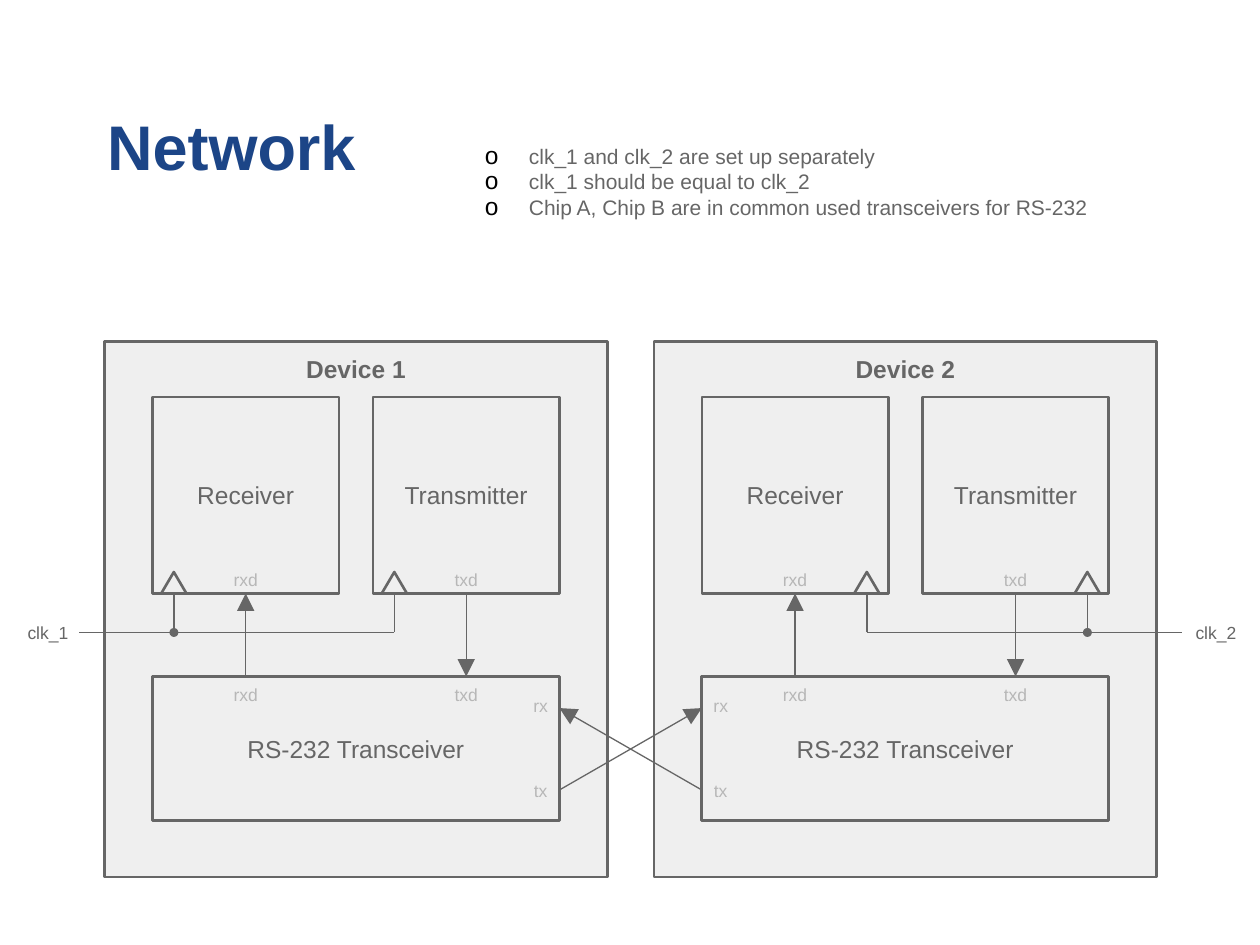
"""Build the Network slide: two devices joined through RS-232 transceivers."""
from lxml.etree import SubElement
from pptx import Presentation
from pptx.dml.color import RGBColor
from pptx.enum.shapes import MSO_CONNECTOR, MSO_SHAPE
from pptx.enum.text import MSO_ANCHOR, MSO_AUTO_SIZE, PP_ALIGN
from pptx.oxml.ns import qn
from pptx.util import Inches, Pt

NAVY = RGBColor(0x1C, 0x45, 0x87)
GRAY = RGBColor(0x66, 0x66, 0x66)
SILVER = RGBColor(0xB7, 0xB7, 0xB7)
PALE = RGBColor(0xEF, 0xEF, 0xEF)
FONT = "Arial"

TITLE = "Network"
NOTES = [
    "clk_1 and clk_2 are set up separately",
    "clk_1 should be equal to clk_2",
    "Chip A, Chip B are in common used transceivers for RS-232",
]
DEVICES = [("Device 1", "clk_1", 0.83, False), ("Device 2", "clk_2", 5.19, True)]
BLOCKS = [("Receiver", "rxd", True), ("Transmitter", "txd", False)]
TRANSCEIVER = "RS-232 Transceiver"
LINKS = [("rx", 5.6), ("tx", 6.27)]

DEVICE_TOP, DEVICE_W, DEVICE_H = 2.71, 3.99, 4.25
PAD, COLUMN_STEP = 0.38, 1.75
BLOCK_TOP, BLOCK_W, BLOCK_H = 3.15, 1.48, 1.56
BLOCK_BOTTOM = BLOCK_TOP + BLOCK_H
TRANSCEIVER_TOP, TRANSCEIVER_H = 5.37, 1.14
CLOCK_Y, CLOCK_INSET = 5.02, 0.17
CLOCK_W, CLOCK_H, DOT = 0.2, 0.17, 0.05
LABEL_W, LABEL_H = 0.54, 0.39
LINK_TOP, LINK_BOTTOM = 5.62, 6.27


def write(shape, lines, size, color, bold=False, align=PP_ALIGN.CENTER, anchor=MSO_ANCHOR.MIDDLE):
    frame = shape.text_frame
    frame.word_wrap = True
    frame.auto_size = MSO_AUTO_SIZE.NONE
    frame.vertical_anchor = anchor
    frame.margin_left = frame.margin_right = frame.margin_top = frame.margin_bottom = Inches(0.1)
    frame.text = "\n".join(lines)
    for paragraph in frame.paragraphs:
        paragraph.alignment = align
        for run in paragraph.runs:
            font = run.font
            font.name, font.size, font.bold = FONT, Pt(size), bold
            font.color.rgb = color


def indent(paragraph, margin, first):
    properties = paragraph._p.get_or_add_pPr()
    properties.set("marL", str(Inches(margin)))
    properties.set("indent", str(Inches(first)))
    return properties


def add_box(slide, kind, left, top, width, height, fill=PALE):
    box = slide.shapes.add_shape(kind, Inches(left), Inches(top), Inches(width), Inches(height))
    box.shadow.inherit = False
    box.fill.solid()
    box.fill.fore_color.rgb = fill
    box.line.color.rgb = GRAY
    box.line.width = Pt(1.5)
    return box


def add_label(slide, text, center, middle, color=SILVER, align=PP_ALIGN.CENTER):
    label = slide.shapes.add_textbox(Inches(center - LABEL_W / 2), Inches(middle - LABEL_H / 2),
                                     Inches(LABEL_W), Inches(LABEL_H))
    write(label, [text], 10, color, align=align)


def add_wire(slide, x1, y1, x2, y2, arrow=False):
    wire = slide.shapes.add_connector(MSO_CONNECTOR.STRAIGHT, Inches(x1), Inches(y1), Inches(x2), Inches(y2))
    wire.line.color.rgb = GRAY
    wire.line.width = Pt(0.75)
    properties = wire._element.spPr
    if arrow:
        SubElement(properties.find(qn("a:ln")), qn("a:tailEnd"), type="triangle", w="lg", len="lg")
    SubElement(properties, qn("a:effectLst"))


def add_heading(slide):
    title = slide.shapes.title
    title.left, title.top, title.width, title.height = Inches(0.5), Inches(0.3), Inches(9), Inches(1.25)
    write(title, [TITLE], 36, NAVY, True, PP_ALIGN.LEFT, MSO_ANCHOR.BOTTOM)
    indent(title.text_frame.paragraphs[0], 0, 0.25)

    notes = slide.shapes.add_textbox(Inches(3.6), Inches(1.04), Inches(5.46), Inches(0.95))
    write(notes, NOTES, 12, GRAY, align=PP_ALIGN.LEFT, anchor=MSO_ANCHOR.TOP)
    for paragraph in notes.text_frame.paragraphs:
        properties = indent(paragraph, 0.5, -0.35)
        SubElement(SubElement(properties, qn("a:buClr")), qn("a:srgbClr"), val="000000")
        SubElement(properties, qn("a:buSzPct"), val="117000")
        SubElement(properties, qn("a:buFont"), typeface=FONT)
        SubElement(properties, qn("a:buChar"), char="o")


def add_device(slide, name, clock, left, mirrored):
    def across(offset):
        return left + (DEVICE_W - offset if mirrored else offset)

    device = add_box(slide, MSO_SHAPE.RECTANGLE, left, DEVICE_TOP, DEVICE_W, DEVICE_H)
    write(device, [name], 14, GRAY, True, anchor=MSO_ANCHOR.TOP)
    transceiver = add_box(slide, MSO_SHAPE.RECTANGLE, left + PAD, TRANSCEIVER_TOP,
                          COLUMN_STEP + BLOCK_W, TRANSCEIVER_H)
    write(transceiver, [TRANSCEIVER], 14, GRAY)

    for column, (block_name, port, upward) in enumerate(BLOCKS):
        block_left = left + PAD + column * COLUMN_STEP
        block = add_box(slide, MSO_SHAPE.RECTANGLE, block_left, BLOCK_TOP, BLOCK_W, BLOCK_H)
        write(block, [block_name], 14, GRAY)
        clock_x = block_left + (BLOCK_W - CLOCK_INSET if mirrored else CLOCK_INSET)
        add_box(slide, MSO_SHAPE.ISOSCELES_TRIANGLE, clock_x - CLOCK_W / 2,
                BLOCK_BOTTOM - CLOCK_H, CLOCK_W, CLOCK_H)
        add_wire(slide, clock_x, BLOCK_BOTTOM, clock_x, CLOCK_Y)

        port_x = block_left + BLOCK_W / 2
        ends = [BLOCK_BOTTOM, TRANSCEIVER_TOP]
        start, end = reversed(ends) if upward else ends
        add_wire(slide, port_x, start, port_x, end, arrow=True)
        for middle in (4.6, 5.51):
            add_label(slide, port, port_x, middle)

    clock_near = across(PAD + CLOCK_INSET)
    clock_far = across(PAD + COLUMN_STEP + CLOCK_INSET)
    add_wire(slide, clock_far, CLOCK_Y, across(-0.2), CLOCK_Y)
    add_box(slide, MSO_SHAPE.OVAL, clock_near - DOT / 2, CLOCK_Y - DOT / 2, DOT, DOT, GRAY)
    add_label(slide, clock, across(-0.46), CLOCK_Y, GRAY, PP_ALIGN.RIGHT)
    for link, middle in LINKS:
        add_label(slide, link, across(3.46), middle)


def main():
    deck = Presentation()
    deck.slide_width, deck.slide_height = Inches(10), Inches(7.5)
    slide = deck.slides.add_slide(deck.slide_layouts[5])
    add_heading(slide)
    for device in DEVICES:
        add_device(slide, *device)
    inner_left = DEVICES[0][2] + DEVICE_W - PAD
    inner_right = DEVICES[1][2] + PAD
    for start, end in ((inner_left, inner_right), (inner_right, inner_left)):
        add_wire(slide, start, LINK_BOTTOM, end, LINK_TOP, arrow=True)
    deck.save("out.pptx")


if __name__ == "__main__":
    main()
